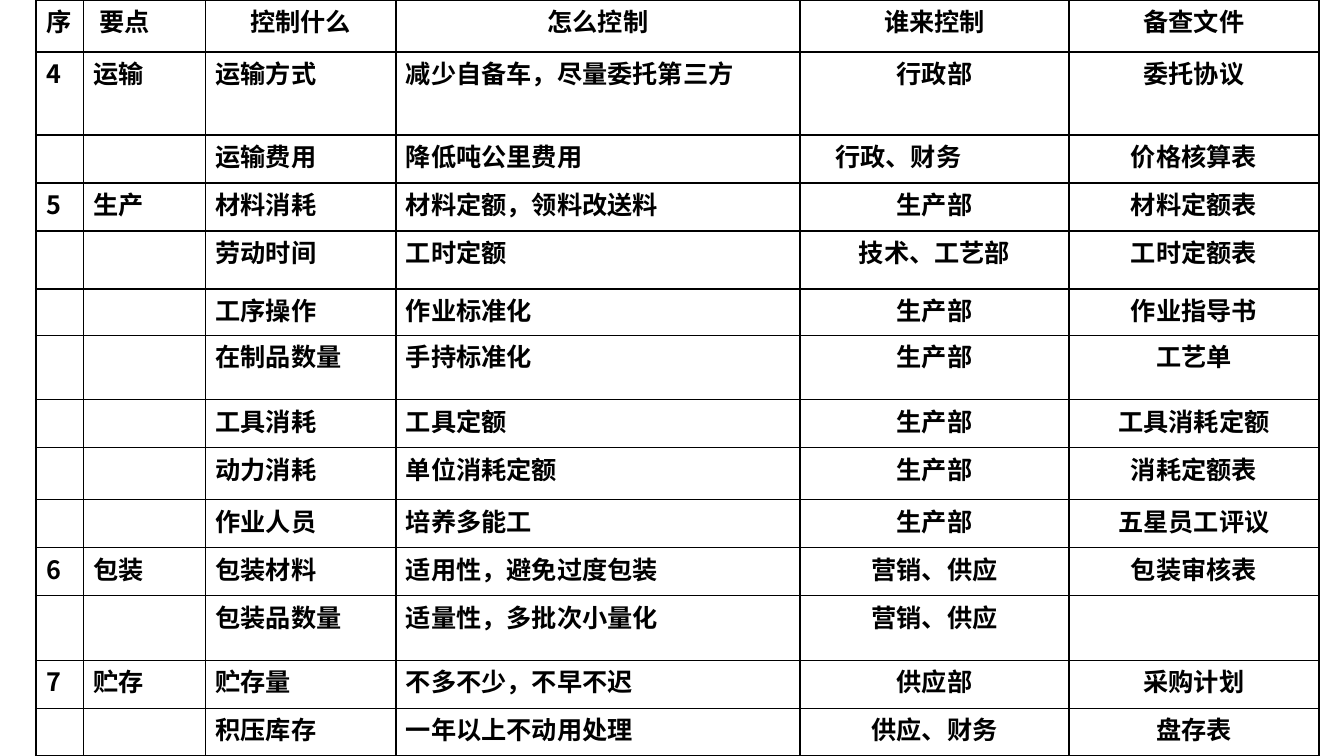
from lxml import etree
from pptx import Presentation
from pptx.dml.color import RGBColor
from pptx.enum.text import MSO_ANCHOR, PP_ALIGN
from pptx.oxml.ns import qn
from pptx.util import Cm, Pt

LEFT, CENTER = PP_ALIGN.LEFT, PP_ALIGN.CENTER
TOP = MSO_ANCHOR.TOP
COLORS = {"text": "000000", "border": "000000"}
FONT = "Noto Sans CJK SC"
THIN, THICK = Pt(1), Pt(2.25)

COLUMN_WIDTHS = [1.2, 3.07, 4.8, 10.18, 6.78, 6.3]
ROW_HEIGHTS = [1.31, 2.09, 1.21, 1.21, 1.46, 1.17, 1.62,
               1.21, 1.31, 1.21, 1.21, 1.62, 1.21, 1.21]
CELL_MARGIN = 0.25
EXTRA_INDENTS = {(0, 1): 0.15, (2, 4): 0.64}
CONTROL_POINTS = [
    ("序", "要点", "控制什么", "怎么控制", "谁来控制", "备查文件"),
    ("4", "运输", "运输方式", "减少自备车，尽量委托第三方", "行政部", "委托协议"),
    ("", "", "运输费用", "降低吨公里费用", "行政、财务", "价格核算表"),
    ("5", "生产", "材料消耗", "材料定额，领料改送料", "生产部", "材料定额表"),
    ("", "", "劳动时间", "工时定额", "技术、工艺部", "工时定额表"),
    ("", "", "工序操作", "作业标准化", "生产部", "作业指导书"),
    ("", "", "在制品数量", "手持标准化", "生产部", "工艺单"),
    ("", "", "工具消耗", "工具定额", "生产部", "工具消耗定额"),
    ("", "", "动力消耗", "单位消耗定额", "生产部", "消耗定额表"),
    ("", "", "作业人员", "培养多能工", "生产部", "五星员工评议"),
    ("6", "包装", "包装材料", "适用性，避免过度包装", "营销、供应", "包装审核表"),
    ("", "", "包装品数量", "适量性，多批次小量化", "营销、供应", ""),
    ("7", "贮存", "贮存量", "不多不少，不早不迟", "供应部", "采购计划"),
    ("", "", "积压库存", "一年以上不动用处理", "供应、财务", "盘存表"),
]


def set_borders(cell, outer_sides):
    properties = cell._tc.get_or_add_tcPr()
    for side in "LRTB":
        width = THICK if side in outer_sides else THIN
        line = etree.SubElement(properties, qn(f"a:ln{side}"), w=str(width))
        fill = etree.SubElement(line, qn("a:solidFill"))
        etree.SubElement(fill, qn("a:srgbClr"), val=COLORS["border"])


def write_cell(cell, text, alignment, indent):
    cell.vertical_anchor = TOP
    cell.margin_left = Cm(CELL_MARGIN + indent)
    cell.text = text
    paragraph = cell.text_frame.paragraphs[0]
    paragraph.alignment = alignment
    paragraph.line_spacing = 0.9
    font = paragraph.font
    font.size = Pt(18)
    font.bold = True
    font.color.rgb = RGBColor.from_string(COLORS["text"])
    font.name = FONT
    defaults = paragraph._p.pPr.find(qn("a:defRPr"))
    etree.SubElement(defaults, qn("a:ea"), typeface=FONT)


def add_control_table(page, left, top, width, height):
    last_row, last_column = len(ROW_HEIGHTS) - 1, len(COLUMN_WIDTHS) - 1
    table = page.shapes.add_table(
        last_row + 1, last_column + 1, Cm(left), Cm(top), Cm(width), Cm(height)
    ).table
    table.first_row = False
    table.horz_banding = False
    for column, size in zip(table.columns, COLUMN_WIDTHS):
        column.width = Cm(size)
    for row, size in zip(table.rows, ROW_HEIGHTS):
        row.height = Cm(size)

    for row, texts in enumerate(CONTROL_POINTS):
        for column, text in enumerate(texts):
            cell = table.cell(row, column)
            edges = {"L": column == 0, "R": column == last_column,
                     "T": row == 0, "B": row == last_row}
            set_borders(cell, [side for side, outer in edges.items() if outer])
            cell.fill.background()
            centered = column >= (2 if row == 0 else 4) and (row, column) not in EXTRA_INDENTS
            write_cell(cell, text, CENTER if centered else LEFT,
                       EXTRA_INDENTS.get((row, column), 0))


def main():
    deck = Presentation()
    deck.slide_width, deck.slide_height = Cm(33.87), Cm(19.05)
    page = deck.slides.add_slide(deck.slide_layouts.get_by_name("Blank"))
    add_control_table(page, 0.91, 0, sum(COLUMN_WIDTHS), sum(ROW_HEIGHTS))
    deck.save("out.pptx")


if __name__ == "__main__":
    main()
